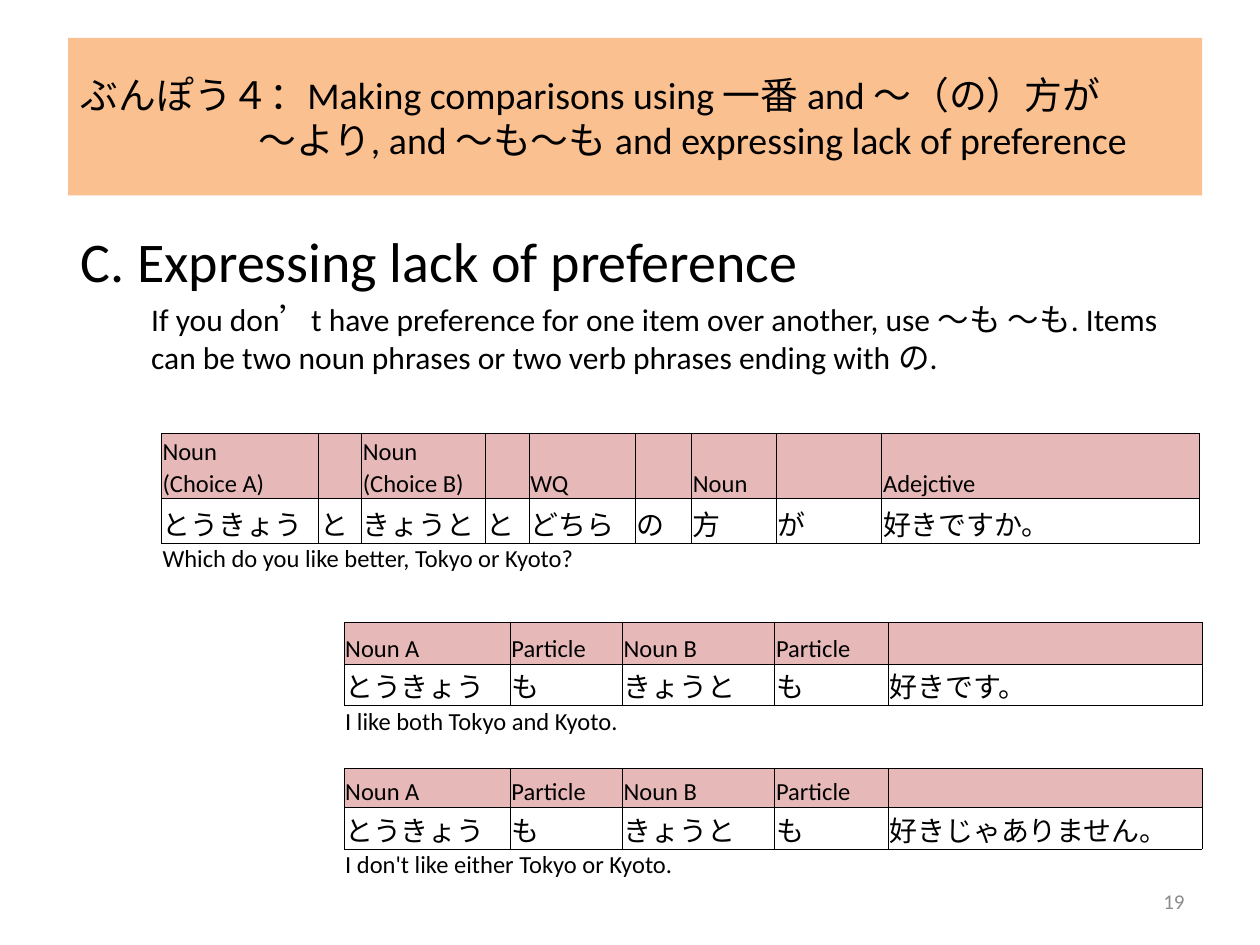
"""Builds a grammar slide on expressing lack of preference in Japanese."""
import pptx
import pptx.dml.color
import pptx.enum.text
import pptx.oxml.ns
import pptx.util
from lxml import etree

BLACK = pptx.dml.color.RGBColor(0x00, 0x00, 0x00)
GRAY = pptx.dml.color.RGBColor(0x8C, 0x8C, 0x8C)
ORANGE = pptx.dml.color.RGBColor(0xFA, 0xC0, 0x90)
PINK = pptx.dml.color.RGBColor(0xE6, 0xB9, 0xB8)
LATIN, KANA = "Calibri", "Lato"
ALIGN = pptx.enum.text.PP_ALIGN
ANCHOR = pptx.enum.text.MSO_ANCHOR

ROW_STYLES = {
    "header": (14, LATIN, PINK, "LRTB"),
    "header top": (14, LATIN, PINK, "LRT"),
    "header bottom": (14, LATIN, PINK, "LRB"),
    "example": (16, KANA, None, "LRTB"),
    "caption": (14, LATIN, None, "T"),
    "gap": (14, LATIN, None, "B"),
}


class GrammarSlide:
    """Holds the style and the current slide; lengths are percent of the slide's size."""

    def __init__(self, deck):
        self.deck = deck
        self.slide = deck.slides.add_slide(deck.slide_layouts[1])

    def across(self, share):
        return round(self.deck.slide_width * share / 100)

    def down(self, share):
        return round(self.deck.slide_height * share / 100)

    def box(self, left, top, width, height):
        return self.across(left), self.down(top), self.across(width), self.down(height)

    def place(self, shape, area):
        shape.left, shape.top, shape.width, shape.height = self.box(*area)

    def style(self, paragraph, size, font=LATIN, color=BLACK, align=ALIGN.LEFT):
        paragraph.alignment = align
        for run in paragraph.runs:
            run.font.size = pptx.util.Pt(size)
            run.font.name = font
            run.font.color.rgb = color

    def indent(self, paragraph, left, first=0):
        properties = paragraph._p.get_or_add_pPr()
        properties.set("marL", str(self.across(left)))
        properties.set("indent", str(self.across(first)))

    def title(self, lines, area, hanging):
        heading = self.slide.shapes.title
        self.place(heading, area)
        heading.fill.solid()
        heading.fill.fore_color.rgb = ORANGE
        frame = heading.text_frame
        frame.text = "\n".join(lines)
        frame.auto_size = pptx.enum.text.MSO_AUTO_SIZE.NONE
        frame.vertical_anchor = ANCHOR.MIDDLE
        for paragraph in frame.paragraphs:
            self.style(paragraph, 21.6)
            paragraph.space_before = pptx.util.Pt(0)
        self.indent(frame.paragraphs[1], hanging)

    def body(self, heading, explanation, area, hanging):
        section = self.slide.placeholders[1]
        self.place(section, area)
        frame = section.text_frame
        frame.text = f"{heading}\n{explanation}"
        frame.auto_size = pptx.enum.text.MSO_AUTO_SIZE.NONE
        for paragraph, size, first in zip(frame.paragraphs, (32, 18), (-hanging, 0)):
            self.style(paragraph, size)
            self.indent(paragraph, hanging, first)
            etree.SubElement(paragraph._p.pPr, pptx.oxml.ns.qn("a:buNone"))

    def page_number(self, number, area):
        frame = self.slide.shapes.add_textbox(*self.box(*area)).text_frame
        frame.word_wrap = True
        frame.vertical_anchor = ANCHOR.MIDDLE
        frame.text = number
        self.style(frame.paragraphs[0], 12, color=GRAY, align=ALIGN.RIGHT)

    def borders(self, cell, edges):
        properties = cell._tc.get_or_add_tcPr()
        for edge in "LRTB":
            line = etree.SubElement(properties, pptx.oxml.ns.qn(f"a:ln{edge}"), w="6350")
            if edge in edges:
                paint = etree.SubElement(line, pptx.oxml.ns.qn("a:solidFill"))
                etree.SubElement(paint, pptx.oxml.ns.qn("a:srgbClr"), val=str(BLACK))
            else:
                etree.SubElement(line, pptx.oxml.ns.qn("a:noFill"))

    def cell(self, cell, text, kind):
        size, font, fill, edges = ROW_STYLES[kind]
        self.borders(cell, edges)
        if fill is None:
            cell.fill.background()
        else:
            cell.fill.solid()
            cell.fill.fore_color.rgb = fill
        cell.margin_left = cell.margin_right = cell.margin_top = pptx.util.Inches(0.01)
        cell.margin_bottom = 0
        cell.vertical_anchor = ANCHOR.BOTTOM
        paragraph = cell.text_frame.paragraphs[0]
        if text:
            paragraph.text = text
            self.style(paragraph, size, font)
        else:
            etree.SubElement(paragraph._p, pptx.oxml.ns.qn("a:endParaRPr"), sz=str(size * 100))

    def table(self, left, top, widths, rows, caption_span):
        area = self.box(left, top, sum(widths), sum(height for _, height, _ in rows))
        table = self.slide.shapes.add_table(len(rows), len(widths), *area).table
        table.first_row = table.horz_banding = False
        for column, width in zip(table.columns, widths):
            column.width = self.across(width)
        for r, (kind, height, texts) in enumerate(rows):
            table.rows[r].height = self.down(height)
            for c in range(len(widths)):
                self.cell(table.cell(r, c), texts[c] if c < len(texts) else "", kind)
            if kind == "caption":
                table.cell(r, 0).merge(table.cell(r, caption_span - 1))


def main():
    deck = pptx.Presentation()
    deck.slide_width, deck.slide_height = pptx.util.Inches(10), pptx.util.Inches(7.5)
    page = GrammarSlide(deck)
    page.title(
        ["ぶんぽう４：Making comparisons using 一番 and ～（の）方が",
         "～より, and ～も～も and expressing lack of preference"],
        (5.4, 4, 90, 16.67), hanging=14.1)
    page.body(
        "C. Expressing lack of preference",
        "If you don’t have preference for one item over another, use ～も ～も. "
        "Items can be two noun phrases or two verb phrases ending with の.",
        (5.4, 23.33, 90, 66), hanging=5.6)
    page.page_number("19", (71.7, 92.67, 23.3, 5.33))

    answer_header = ["Noun A", "Particle", "Noun B", "Particle"]
    answer_start = ["とうきょう", "も", "きょうと", "も"]
    page.table(27.3, 65.87, [13.2, 8.9, 12.1, 9, 24.9], [
        ("header", 4.4, answer_header),
        ("example", 4.4, answer_start + ["好きです。"]),
        ("caption", 3.33, ["I like both Tokyo and Kyoto."]),
        ("gap", 3.33, []),
        ("header", 4.13, answer_header),
        ("example", 4.4, answer_start + ["好きじゃありません。"]),
        ("caption", 2.93, ["I don't like either Tokyo or Kyoto."]),
    ], caption_span=3)
    page.table(12.8, 45.87, [12.5, 3.4, 9.8, 3.5, 8.4, 4.5, 6.7, 8.4, 25.2], [
        ("header top", 3.6, ["Noun", "", "Noun"]),
        ("header bottom", 3.33,
         ["(Choice A)", "", "(Choice B)", "", "WQ", "", "Noun", "", "Adejctive"]),
        ("example", 4.67,
         ["とうきょう", "と", "きょうと", "と", "どちら", "の", "方", "が", "好きですか。"]),
        ("caption", 3.33, ["Which do you like better, Tokyo or Kyoto?"]),
    ], caption_span=5)
    deck.save("out.pptx")


if __name__ == "__main__":
    main()
